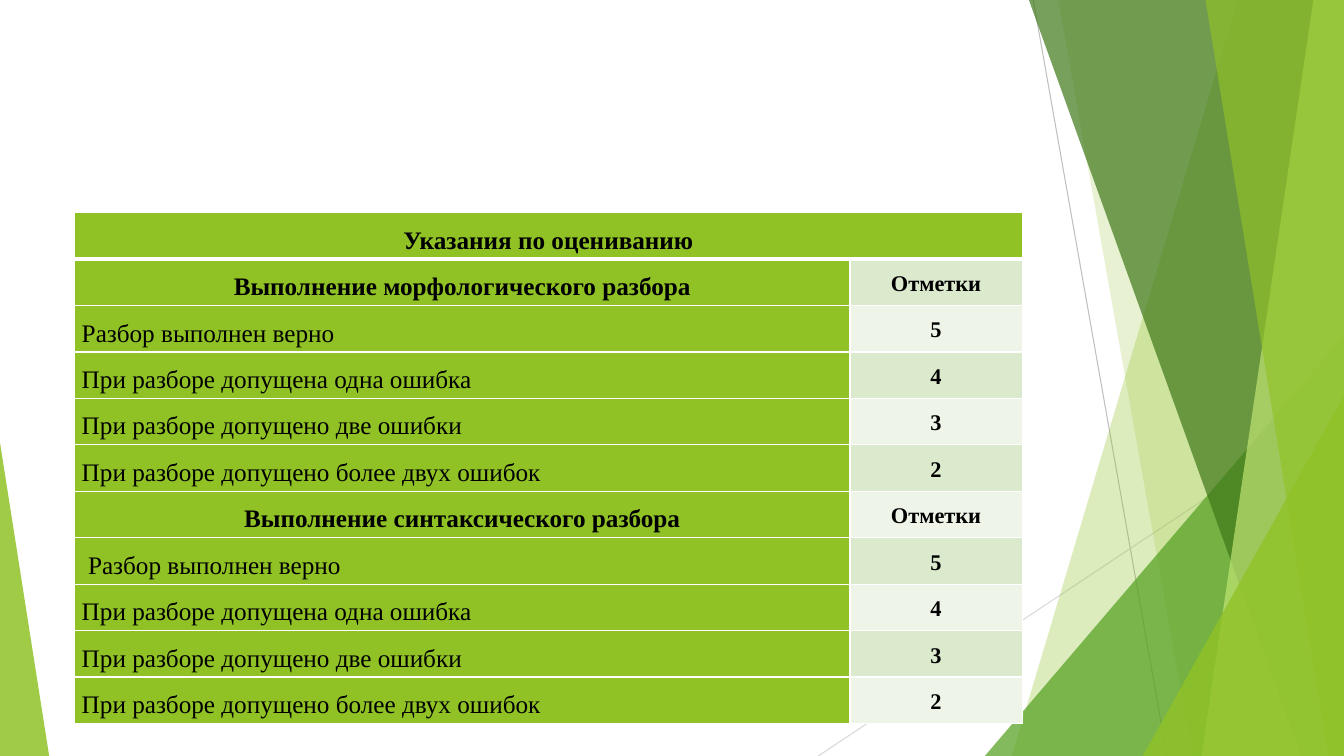
"""Build a slide with a table of marking guidelines on a faceted green backdrop."""
from collections import namedtuple

from lxml.etree import SubElement
from pptx import Presentation
from pptx.dml.color import RGBColor
from pptx.enum.shapes import MSO_CONNECTOR, MSO_SHAPE
from pptx.enum.text import PP_ALIGN
from pptx.oxml.ns import qn
from pptx.util import Cm, Pt

WHITE = RGBColor(0xFF, 0xFF, 0xFF)
BLACK = RGBColor(0x00, 0x00, 0x00)
LIME = RGBColor(0x90, 0xC2, 0x26)
GREEN = RGBColor(0x54, 0xA0, 0x21)
FOREST = RGBColor(0x3F, 0x78, 0x19)
PALE_LIME = RGBColor(0xC0, 0xE4, 0x74)
MARK_DARK = RGBColor(0xDB, 0xE9, 0xCD)
MARK_LIGHT = RGBColor(0xEE, 0xF4, 0xE8)
GREY = RGBColor(0xBF, 0xBF, 0xBF)
LIGHT_GREY = RGBColor(0xD9, 0xD9, 0xD9)

FONT = "Times New Roman"
ROW_HEIGHT = Cm(1.17)
MARK_WIDTH = Cm(4.34)

Box = namedtuple("Box", "left top width height")

TITLE = "Указания по оцениванию"
MISTAKES = [
    ("При разборе допущена одна ошибка", "4"),
    ("При разборе допущено две ошибки", "3"),
    ("При разборе допущено более двух ошибок", "2"),
]
ROWS = [
    ("Выполнение морфологического разбора", "Отметки"),
    ("Разбор выполнен верно", "5"),
    *MISTAKES,
    ("Выполнение синтаксического разбора", "Отметки"),
    (" Разбор выполнен верно", "5"),
    *MISTAKES,
]


def paint(shape, color, opacity):
    """Give a shape a translucent fill without outline or shadow."""
    shape.shadow.inherit = False
    shape.line.fill.background()
    shape.fill.solid()
    shape.fill.fore_color.rgb = color
    tint = shape.fill._xPr.find(qn("a:solidFill"))[0]
    SubElement(tint, qn("a:alpha"), val=str(opacity * 1000))


def add_ray(page, box, start, end, color):
    """Draw a thin line between two points of the box."""
    ray = page.shapes.add_connector(
        MSO_CONNECTOR.STRAIGHT,
        box.left + Cm(start[0]), box.top + Cm(start[1]),
        box.left + Cm(end[0]), box.top + Cm(end[1]))
    ray.line.color.rgb = color
    ray.line.width = Pt(0.75)
    SubElement(ray._element.spPr, qn("a:effectLst"))


def add_band(page, box, top_x, bottom_x, color, opacity):
    """Fill the box from a slanted left edge to its right side."""
    right, bottom = box.left + box.width, box.top + box.height
    outline = page.shapes.build_freeform(box.left + Cm(top_x), box.top)
    outline.add_line_segments([
        (right, box.top), (right, bottom), (box.left + Cm(bottom_x), bottom)])
    paint(outline.convert_to_shape(), color, opacity)


def add_wedge(page, box, left, width, height, apex, color, opacity):
    """Stand a right triangle on the bottom of the box."""
    wedge = page.shapes.add_shape(
        MSO_SHAPE.ISOSCELES_TRIANGLE, box.left + Cm(left),
        box.top + box.height - Cm(height), Cm(width), Cm(height))
    wedge.adjustments[0] = apex
    paint(wedge, color, opacity)


def add_backdrop(page, box):
    """Layer the rays, bands and wedges over the box."""
    add_ray(page, box, (26.04, 0), (29.41, 19.05), GREY)
    add_ray(page, box, (33.87, 10.24), (20.62, 19.05), LIGHT_GREY)
    add_band(page, box, 31.19, 25.5, LIME, 30)
    add_band(page, box, 26.67, 30.05, LIME, 20)
    add_wedge(page, box, 24.82, 9.05, 10.59, 1, GREEN, 72)
    add_band(page, box, 25.93, 32.79, FOREST, 70)
    add_band(page, box, 33.1, 30.28, PALE_LIME, 70)
    add_band(page, box, 30.38, 33.48, LIME, 65)
    add_wedge(page, box, 28.8, 5.07, 9.07, 1, LIME, 80)
    add_wedge(page, box, 0, 1.24, 7.9, 0, LIME, 85)


def style_cell(cell, color, top=1, bottom=1):
    """Set the margins, white borders and fill of a cell."""
    cell.margin_left = cell.margin_right = Cm(0.18)
    cell.margin_top = cell.margin_bottom = 0
    properties = cell._tc.get_or_add_tcPr()
    for side, width in (("L", 1), ("R", 1), ("T", top), ("B", bottom)):
        border = SubElement(properties, qn(f"a:ln{side}"), w=str(Pt(width)))
        fill = SubElement(border, qn("a:solidFill"))
        SubElement(fill, qn("a:srgbClr"), val=str(WHITE))
    cell.fill.solid()
    cell.fill.fore_color.rgb = color


def write_cell(cell, text, size, bold, align):
    """Write one line of text into a cell."""
    para = cell.text_frame.paragraphs[0]
    para.alignment = align
    para.line_spacing = 1.5
    span = para.add_run()
    span.text = text
    span.font.name = FONT
    span.font.size = Pt(size)
    span.font.bold = bold
    span.font.color.rgb = BLACK


def add_marking_table(page, box):
    """Fill the box with the marking guidelines."""
    table = page.shapes.add_table(len(ROWS) + 1, 2, *box).table
    table.first_row = table.horz_banding = False
    table.columns[0].width = box.width - MARK_WIDTH
    table.columns[1].width = MARK_WIDTH
    for row in table.rows:
        row.height = ROW_HEIGHT

    for column in range(2):
        style_cell(table.cell(0, column), LIME, bottom=3)
    table.cell(0, 0).merge(table.cell(0, 1))
    write_cell(table.cell(0, 0), TITLE, 18, True, PP_ALIGN.CENTER)

    for index, (label, mark) in enumerate(ROWS, start=1):
        heading = not mark.isdigit()
        top = 3 if index == 1 else 1
        label_cell, mark_cell = table.cell(index, 0), table.cell(index, 1)
        style_cell(label_cell, LIME, top=top)
        style_cell(mark_cell, MARK_DARK if index % 2 else MARK_LIGHT, top=top)
        write_cell(label_cell, label, 18, heading,
                   PP_ALIGN.CENTER if heading else PP_ALIGN.JUSTIFY)
        write_cell(mark_cell, mark, 16, True, PP_ALIGN.CENTER)


def main():
    """Create the deck and save it."""
    deck = Presentation()
    deck.slide_width, deck.slide_height = Cm(33.87), Cm(19.05)
    page = deck.slides.add_slide(deck.slide_layouts[6])
    add_backdrop(page, Box(0, 0, deck.slide_width, deck.slide_height))
    add_marking_table(page, Box(
        Cm(1.88), Cm(5.36), Cm(23.88), ROW_HEIGHT * (len(ROWS) + 1)))
    deck.save("out.pptx")


if __name__ == "__main__":
    main()
